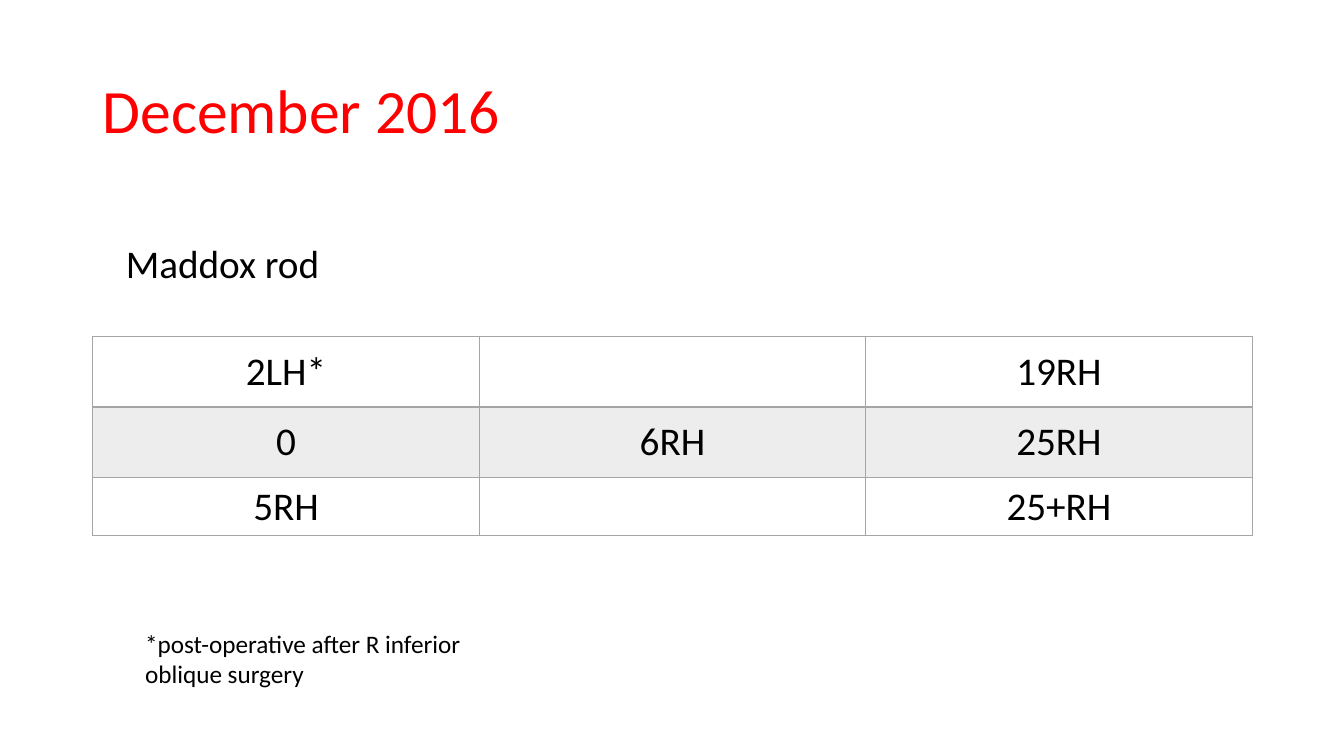
from dataclasses import dataclass

from lxml import etree
from pptx import Presentation
from pptx.dml.color import RGBColor
from pptx.enum import text
from pptx.oxml import ns
from pptx.util import Inches, Pt


@dataclass(frozen=True)
class Theme:
    font: str = "Calibri"
    title_color: str = "FF0000"
    ink: str = "000000"
    border: str = "A5A5A5"
    band: str = "EDEDED"
    title_size: int = 44
    body_size: int = 28
    note_size: int = 18


class SlideBuilder:
    def __init__(self, page, theme):
        self.page = page
        self.theme = theme

    def style(self, para, size, color):
        para.font.size = Pt(size)
        for span in para.runs:
            span.font.name = self.theme.font
            span.font.size = Pt(size)
            span.font.color.rgb = RGBColor.from_string(color)

    def text_box(self, words, left, top, width, height, size, color,
                 anchor=text.MSO_ANCHOR.TOP, line_spacing=1.0):
        box = self.page.shapes.add_textbox(
            Inches(left), Inches(top), Inches(width), Inches(height))
        frame = box.text_frame
        frame.word_wrap = True
        frame.vertical_anchor = anchor
        frame.text = words
        para = frame.paragraphs[0]
        para.line_spacing = line_spacing
        self.style(para, size, color)

    def borders(self, cell, top, bottom):
        properties = cell._tc.get_or_add_tcPr()
        widths = {"a:lnL": 1, "a:lnR": 1, "a:lnT": top, "a:lnB": bottom}
        for position, (tag, width) in enumerate(widths.items()):
            line = etree.Element(ns.qn(tag), w=str(Pt(width)))
            fill = etree.SubElement(line, ns.qn("a:solidFill"))
            etree.SubElement(fill, ns.qn("a:srgbClr"), val=self.theme.border)
            properties.insert(position, line)

    def table(self, values, left, top, width, row_heights):
        table = self.page.shapes.add_table(
            len(values), len(values[0]), Inches(left), Inches(top),
            Inches(width), Inches(sum(row_heights))).table
        table.first_row = False
        table.horz_banding = False
        for row_index, (row, height) in enumerate(zip(values, row_heights)):
            table.rows[row_index].height = Inches(height)
            for column_index, value in enumerate(row):
                cell = table.cell(row_index, column_index)
                cell.text = value
                cell.vertical_anchor = text.MSO_ANCHOR.MIDDLE
                para = cell.text_frame.paragraphs[0]
                para.alignment = text.PP_ALIGN.CENTER
                self.style(para, self.theme.body_size, self.theme.ink)
                if row_index % 2:
                    cell.fill.solid()
                    cell.fill.fore_color.rgb = RGBColor.from_string(self.theme.band)
                else:
                    cell.fill.background()
                self.borders(cell, top=2 if row_index == 1 else 1,
                             bottom=2 if row_index == 0 else 1)


def main():
    deck = Presentation()
    deck.slide_width = Inches(13.33)
    deck.slide_height = Inches(7.5)
    theme = Theme()
    slide = SlideBuilder(deck.slides.add_slide(deck.slide_layouts[6]), theme)

    slide.text_box("December 2016", 0.92, 0.4, 11.5, 1.45, theme.title_size,
                   theme.title_color, text.MSO_ANCHOR.MIDDLE, 0.9)
    measurements = [
        ["2LH*", "", "19RH"],
        ["0", "6RH", "25RH"],
        ["5RH", "", "25+RH"],
    ]
    slide.table(measurements, 0.92, 3.34, 11.5, [0.7, 0.7, 0.57])
    slide.text_box("Maddox rod", 1.15, 2.33, 3.22, 0.57, theme.body_size, theme.ink)
    slide.text_box("*post-operative after R inferior oblique surgery",
                   1.34, 6.18, 3.49, 0.71, theme.note_size, theme.ink)
    deck.save("out.pptx")


if __name__ == "__main__":
    main()
